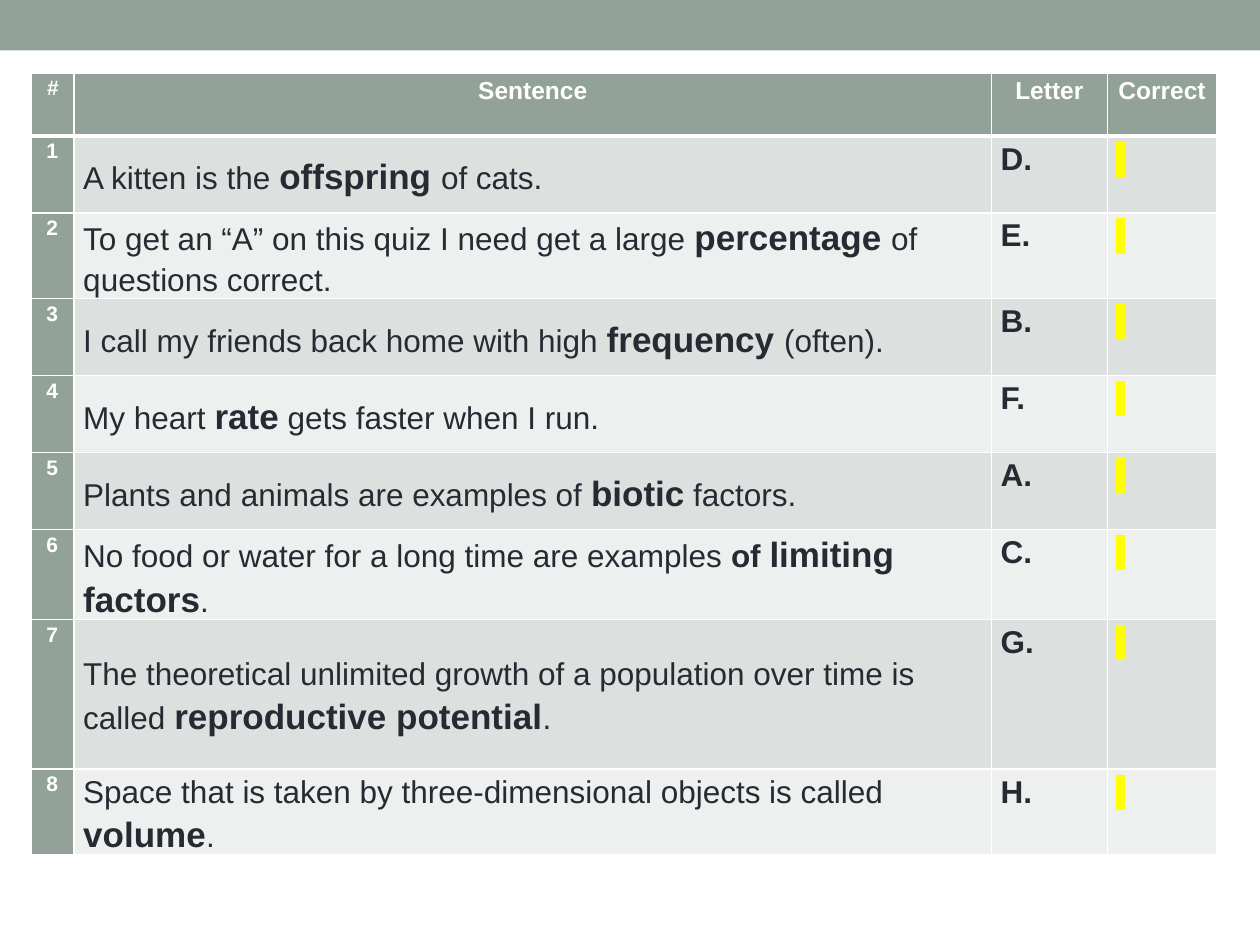
from dataclasses import dataclass

from lxml import etree
from pptx import Presentation
from pptx.dml.color import RGBColor
from pptx.enum import shapes, text
from pptx.oxml import ns
from pptx.util import Pt

NBSP = chr(160)
HEADINGS = ["#", "Sentence", "Letter", "Correct"]
ANSWERS = [
    ("D.", ["A kitten is the ", "*offspring ", "of cats."]),
    ("E.", ["To get an “A” on this quiz I need get a large ", "*percentage ", "of questions correct."]),
    ("B.", ["I call my friends back home with high ", "*frequency ", "(often)."]),
    ("F.", ["My heart ", "*rate", " gets faster when I run."]),
    ("A.", ["Plants and animals are examples of ", "*biotic", " factors."]),
    ("C.", ["No food or water for a long time are examples ", "+of ", "*limiting factors", "."]),
    ("G.", ["The theoretical unlimited growth of a population over time is called ",
            "*reproductive potential", "."]),
    ("H.", ["Space that is taken by three-dimensional objects is called ", "*volume", "."]),
]
COLUMN_WIDTHS = [24.4, 524.2, 66.2, 62.6]
ROW_HEIGHTS = [36] + [44] * 6 + [85.6, 44]


@dataclass(frozen=True)
class Theme:
    """Colours, font and type sizes of the slide."""
    sage: str = "93A299"
    white: str = "FFFFFF"
    ink: str = "292934"
    bands: tuple = ("DCE0DE", "EEF0EF")
    marker: str = "FFFF00"
    font: str = "Arial"
    number: float = 12
    heading: float = 14
    body: float = 18
    keyword: float = 20


THEME = Theme()
CELL = {"margin_left": Pt(5.2), "margin_right": Pt(5.2), "margin_top": Pt(0), "margin_bottom": Pt(0)}
SPACED = {"line_spacing": 1.15, "space_before": Pt(6), "space_after": Pt(6)}
CENTERED = SPACED | {"alignment": text.PP_ALIGN.CENTER}
JUSTIFIED = SPACED | {"alignment": text.PP_ALIGN.JUSTIFY}
TIGHT = {"line_spacing": 1.15}


def apply(target, values):
    """Set each attribute of the target from a dict."""
    for name, value in values.items():
        setattr(target, name, value)


def paint(fill, color):
    """Give a solid fill."""
    fill.solid()
    fill.fore_color.rgb = RGBColor.from_string(color)


def add_color(parent, tag, color):
    """Append an element that holds one RGB colour."""
    holder = etree.SubElement(parent, ns.qn(tag))
    etree.SubElement(holder, ns.qn("a:srgbClr"), val=color)
    return holder


def add_run(paragraph, wording, size, color, bold=True):
    """Add a run in the theme font."""
    run = paragraph.add_run()
    run.text = wording
    apply(run.font, {"size": Pt(size), "bold": bold, "name": THEME.font})
    run.font.color.rgb = RGBColor.from_string(color)
    return run


def format_cell(cell, fill, spacing, top=1, bottom=1):
    """Border, fill and space a cell, and return its paragraph."""
    apply(cell, CELL)
    properties = cell._tc.get_or_add_tcPr()
    for side, width in {"L": 1, "R": 1, "T": top, "B": bottom}.items():
        border = etree.SubElement(properties, ns.qn(f"a:ln{side}"), w=str(Pt(width)))
        add_color(border, "a:solidFill", THEME.white)
    paint(cell.fill, fill)
    paragraph = cell.text_frame.paragraphs[0]
    apply(paragraph, spacing)
    return paragraph


def fill_sentence(cell, paragraph, parts):
    """Write a sentence: * marks a keyword and + marks plain bold."""
    cell.vertical_anchor = text.MSO_ANCHOR.MIDDLE
    for part in parts:
        size = THEME.keyword if part.startswith("*") else THEME.body
        add_run(paragraph, part.lstrip("*+"), size, THEME.ink, part[0] in "*+")


def add_marker(paragraph):
    """Add a highlighted blank for the correct mark."""
    blank = add_run(paragraph, NBSP, THEME.body, THEME.ink)
    properties = blank.font._element
    highlight = add_color(properties, "a:highlight", THEME.marker)
    properties.find(ns.qn("a:latin")).addprevious(highlight)


def fill_headings(row):
    """Fill the heading row."""
    for column, (cell, heading) in enumerate(zip(row.cells, HEADINGS)):
        size = THEME.heading if column else THEME.number
        paragraph = format_cell(cell, THEME.sage, CENTERED, bottom=3)
        add_run(paragraph, heading, size, THEME.white)


def fill_answer(row, number, letter, sentence):
    """Fill one numbered answer row."""
    band = THEME.bands[(number - 1) % 2]
    fills = [THEME.sage, band, band, band]
    spacings = [JUSTIFIED, TIGHT, SPACED, SPACED]
    top = 3 if number == 1 else 1
    cells = list(row.cells)
    number_line, sentence_line, letter_line, correct_line = [
        format_cell(cell, fill, spacing, top) for cell, fill, spacing in zip(cells, fills, spacings)]
    add_run(number_line, f"{NBSP}{number}", THEME.number, THEME.white)
    fill_sentence(cells[1], sentence_line, sentence)
    add_run(letter_line, letter, THEME.body, THEME.ink)
    add_marker(correct_line)


def add_banner(slide):
    """Add the band across the top of the slide."""
    banner = slide.shapes.add_shape(shapes.MSO_SHAPE.RECTANGLE, 0, 0, Pt(720), Pt(28.8))
    banner.shadow.inherit = False
    paint(banner.fill, THEME.sage)
    banner.line.fill.background()


def add_quiz_table(slide):
    """Add the answer table."""
    quiz = slide.shapes.add_table(
        len(ROW_HEIGHTS), len(COLUMN_WIDTHS), Pt(18), Pt(41.8),
        Pt(sum(COLUMN_WIDTHS)), Pt(sum(ROW_HEIGHTS))).table
    quiz.first_col = True
    for column, width in zip(quiz.columns, COLUMN_WIDTHS):
        column.width = Pt(width)
    for row, height in zip(quiz.rows, ROW_HEIGHTS):
        row.height = Pt(height)
    fill_headings(quiz.rows[0])
    for number, (letter, sentence) in enumerate(ANSWERS, 1):
        fill_answer(quiz.rows[number], number, letter, sentence)


def main():
    """Build and save the slide."""
    deck = Presentation()
    apply(deck, {"slide_width": Pt(720), "slide_height": Pt(540)})
    slide = deck.slides.add_slide(deck.slide_layouts[6])
    add_banner(slide)
    add_quiz_table(slide)
    deck.save("out.pptx")


if __name__ == "__main__":
    main()
